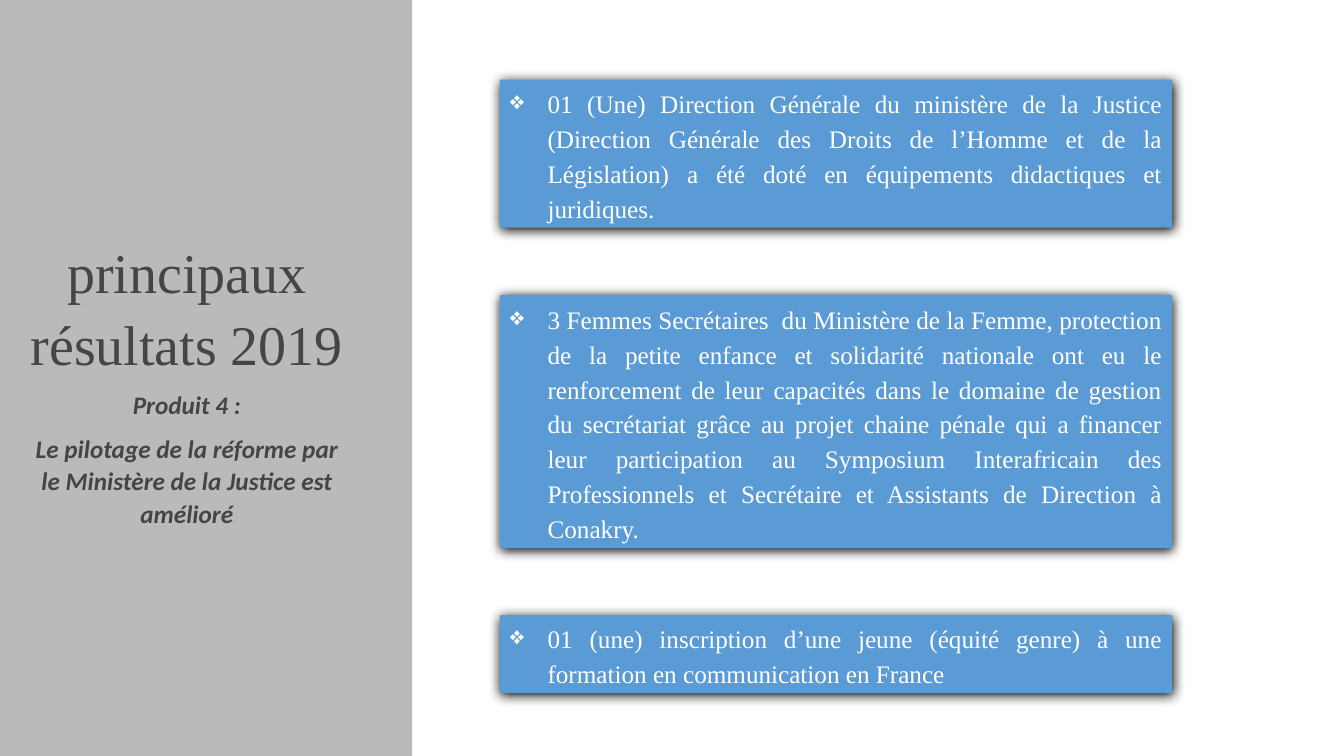
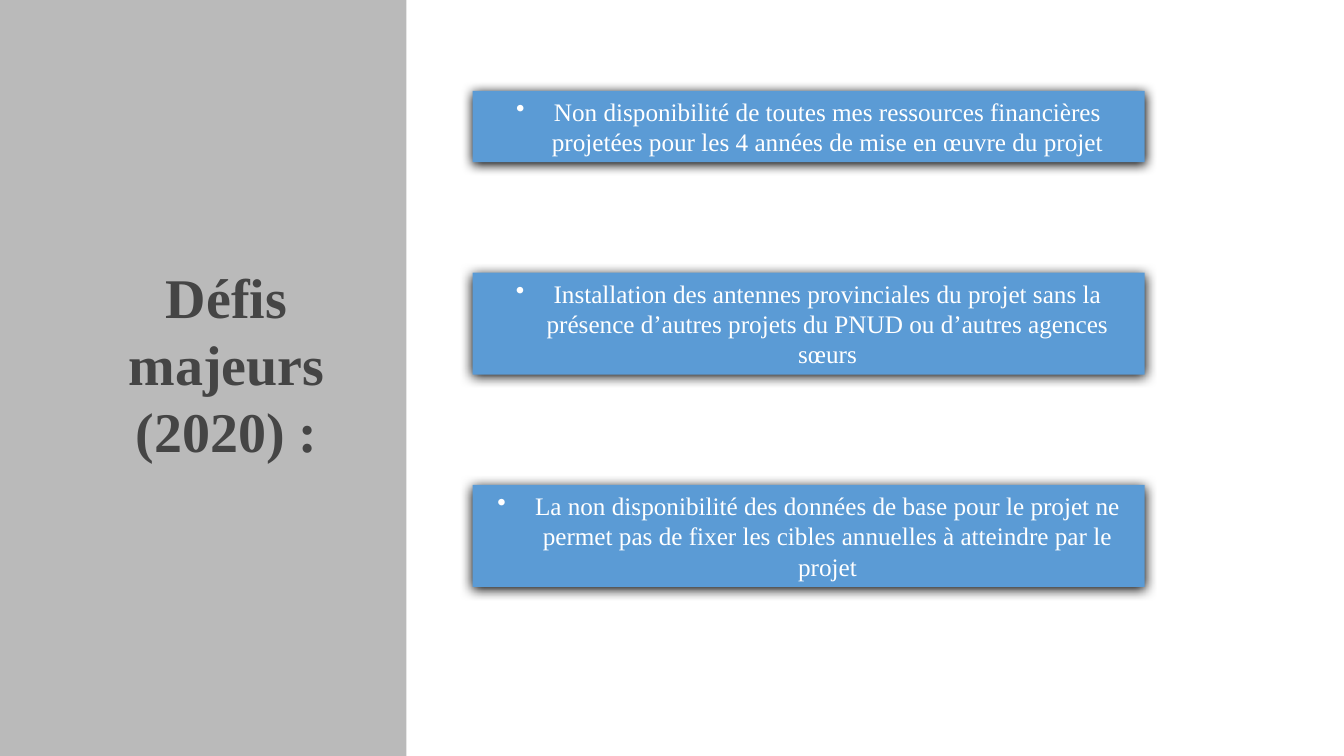
import pptx
import pptx.util
import pptx.dml.color
import pptx.enum.shapes
import pptx.enum.text
import pptx.oxml
import pptx.oxml.ns

Cm = pptx.util.Cm
Pt = pptx.util.Pt
ALIGN = pptx.enum.text.PP_ALIGN
ANCHOR = pptx.enum.text.MSO_ANCHOR
GROW = pptx.enum.text.MSO_AUTO_SIZE.SHAPE_TO_FIT_TEXT

COLORS = {"panel": "808080", "card": "5B9BD5", "title": "000000",
          "card_text": "FFFFFF", "shadow": "000000"}
SLIDE_W, SLIDE_H = 33.87, 19.05
CARD_W = 16.94
INDENT = 0.95
PANEL_ALPHA = 54

TITLE = {"name": "Times New Roman", "size": Pt(40)}
TITLE_BOLD = {**TITLE, "bold": True}
SUBTITLE = {"name": "Calibri", "size": Pt(18), "bold": True, "italic": True}
CARD_FONT = {"name": "Times New Roman", "size": Pt(18)}

CENTERED = {"alignment": ALIGN.CENTER}
SPACED = {"alignment": ALIGN.CENTER, "line_spacing": 1.07, "space_after": Pt(8)}
JUSTIFIED = {"alignment": ALIGN.JUSTIFY, "line_spacing": 1.15}


def rgb(key):
    return pptx.dml.color.RGBColor.from_string(COLORS[key])


def set_attrs(obj, values):
    for name, value in values.items():
        setattr(obj, name, value)


def xml(body):
    head, rest = body.split(" ", 1)
    return pptx.oxml.parse_xml(f"{head} {pptx.oxml.ns.nsdecls('a')} {rest}")


def write(p, text, color, font, layout):
    set_attrs(p, layout)
    r = p.add_run()
    r.text = text
    set_attrs(r.font, font)
    r.font.color.rgb = rgb(color)


def add_rect(s, left, top, width, height, color):
    sp = s.shapes.add_shape(pptx.enum.shapes.MSO_SHAPE.RECTANGLE,
                            Cm(left), Cm(top), Cm(width), Cm(height))
    sp.shadow.inherit = False
    sp.fill.solid()
    sp.fill.fore_color.rgb = rgb(color)
    sp.line.fill.background()
    return sp


def add_title(s, left, top, width, height, paragraphs):
    tf = s.shapes.add_textbox(Cm(left), Cm(top), Cm(width), Cm(height)).text_frame
    set_attrs(tf, {"word_wrap": True, "auto_size": GROW})
    for i, (text, font, layout) in enumerate(paragraphs):
        p = tf.add_paragraph() if i else tf.paragraphs[0]
        write(p, text, "title", font, layout)


def add_panel(s, width):
    sp = add_rect(s, 0, 0, width, SLIDE_H, "panel")
    color = sp.fill._xPr.find(".//" + pptx.oxml.ns.qn("a:srgbClr"))
    color.append(xml(f'<a:alpha val="{PANEL_ALPHA * 1000}"/>'))


def add_shadow(sp):
    effects = sp._element.spPr.find(pptx.oxml.ns.qn("a:effectLst"))
    effects.append(xml(
        f'<a:outerShdw blurRad="{Pt(8.5)}" dist="{Pt(1)}" dir="5400000" '
        f'algn="ctr" rotWithShape="0"><a:srgbClr val="{COLORS["shadow"]}"/>'
        '</a:outerShdw>'))


def add_bullet(p, char):
    pPr = p._p.get_or_add_pPr()
    pPr.set("marL", str(Cm(INDENT)))
    pPr.set("indent", str(-Cm(INDENT)))
    pPr.append(xml(f'<a:buChar char="{char}"/>'))


def add_card(s, left, top, height, text, bullet, layout):
    sp = add_rect(s, left, top, CARD_W, height, "card")
    add_shadow(sp)
    tf = sp.text_frame
    set_attrs(tf, {"word_wrap": True, "auto_size": GROW,
                   "vertical_anchor": ANCHOR.MIDDLE})
    p = tf.paragraphs[0]
    write(p, text, "card_text", CARD_FONT, layout)
    add_bullet(p, bullet)


def add_cards(s, left, top, gap, cards, bullet, layout):
    for height, text in cards:
        add_card(s, left, top, height, text, bullet, layout)
        top += height + gap


def add_results(prs):
    s = prs.slides.add_slide(prs.slide_layouts[6])
    add_title(s, 0.48, 5.74, 8.46, 7.8, [
        ("principaux résultats 2019", TITLE, SPACED),
        ("Produit 4 :", SUBTITLE, SPACED),
        ("Le pilotage de la réforme par le Ministère de la Justice est amélioré",
         SUBTITLE, SPACED),
    ])
    add_panel(s, 10.39)
    add_cards(s, 12.6, 2.01, 1.69, [
        (3.73, "01 (Une) Direction Générale du ministère de la Justice "
               "(Direction Générale des Droits de l’Homme et de la Législation) "
               "a été doté en équipements didactiques et juridiques."),
        (6.38, "3 Femmes Secrétaires  du Ministère de la Femme, protection de la "
               "petite enfance et solidarité nationale ont eu le renforcement de "
               "leur capacités dans le domaine de gestion du secrétariat grâce au "
               "projet chaine pénale qui a financer leur participation au "
               "Symposium Interafricain des Professionnels et Secrétaire et "
               "Assistants de Direction à Conakry."),
        (1.96, "01 (une) inscription d’une jeune (équité genre) à une formation "
               "en communication en France"),
    ], "❖", JUSTIFIED)


def add_challenges(prs):
    s = prs.slides.add_slide(prs.slide_layouts[6])
    add_title(s, 1.52, 6.48, 8.38, 5.38,
              [("Défis majeurs (2020) :", TITLE_BOLD, CENTERED)])
    add_panel(s, 10.24)
    add_cards(s, 11.91, 2.29, 2.78, [
        (1.8, "Non disponibilité de toutes mes ressources financières projetées "
              "pour les 4 années de mise en œuvre du projet"),
        (2.57, "Installation des antennes provinciales du projet sans la présence "
               "d’autres projets du PNUD ou d’autres agences sœurs"),
        (2.57, "La non disponibilité des données de base pour le projet ne permet "
               "pas de fixer les cibles annuelles à atteindre par le projet"),
    ], "•", CENTERED)


def main():
    prs = pptx.Presentation()
    set_attrs(prs, {"slide_width": Cm(SLIDE_W), "slide_height": Cm(SLIDE_H)})
    add_results(prs)
    add_challenges(prs)
    prs.save("out.pptx")


if __name__ == "__main__":
    main()
